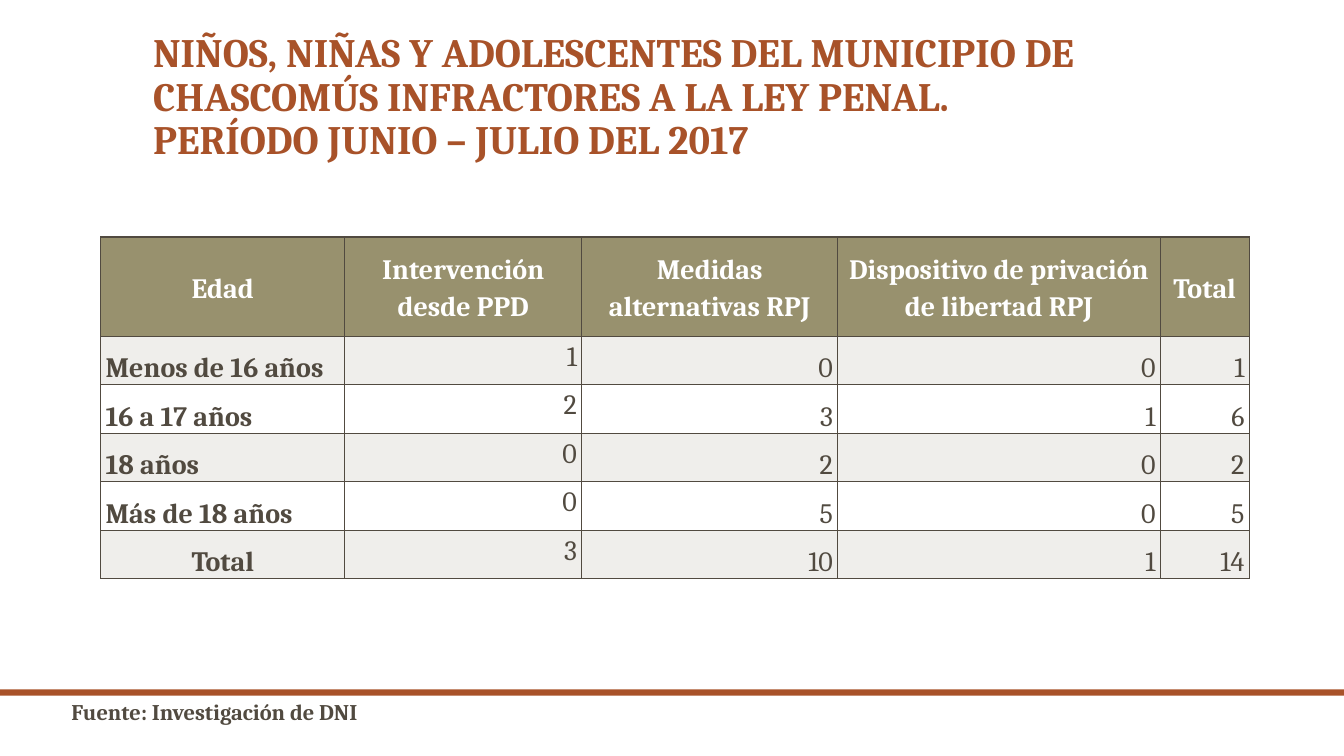
from dataclasses import dataclass
from typing import Any

from lxml.etree import SubElement
from pptx import Presentation
from pptx.dml.color import RGBColor
from pptx.enum.shapes import MSO_SHAPE
from pptx.enum.text import MSO_ANCHOR, PP_ALIGN
from pptx.oxml.ns import qn
from pptx.slide import Slide
from pptx.table import _Cell
from pptx.util import Cm, Pt

RUST = RGBColor(0xA8, 0x52, 0x29)
BROWN = RGBColor(0x51, 0x4A, 0x40)
OLIVE = RGBColor(0x98, 0x91, 0x6E)
PALE = RGBColor(0xEF, 0xEE, 0xEB)
WHITE = RGBColor(0xFF, 0xFF, 0xFF)
FONT = "Cambria"


@dataclass(frozen=True)
class TextStyle:
    size: float
    color: RGBColor
    bold: bool = True
    align: PP_ALIGN = PP_ALIGN.LEFT
    anchor: MSO_ANCHOR = MSO_ANCHOR.BOTTOM
    line_spacing: float = 1.15


@dataclass(frozen=True)
class TextBlock:
    text: str
    left: float
    top: float
    width: float
    height: float
    style: TextStyle


HEADER = TextStyle(20, WHITE, align=PP_ALIGN.CENTER, anchor=MSO_ANCHOR.MIDDLE)
AGE = TextStyle(20, BROWN)
TOTAL_LABEL = TextStyle(20, BROWN, align=PP_ALIGN.CENTER)
COUNT = TextStyle(20, BROWN, bold=False, align=PP_ALIGN.RIGHT)
PPD_COUNT = TextStyle(20, BROWN, bold=False, align=PP_ALIGN.RIGHT, anchor=MSO_ANCHOR.TOP)

TEXT_BLOCKS = (
    TextBlock(
        "NIÑOS, NIÑAS Y ADOLESCENTES DEL MUNICIPIO DE CHASCOMÚS INFRACTORES A LA LEY PENAL. "
        "\vPERÍODO JUNIO – JULIO DEL 2017",
        3.61, 1.07, 26.67, 3.18, TextStyle(28.8, RUST, line_spacing=0.9),
    ),
    TextBlock(
        "Fuente: Investigación de DNI",
        1.55, 17.42, 30.81, 0.94,
        TextStyle(16, BROWN, anchor=MSO_ANCHOR.TOP, line_spacing=1.07),
    ),
)
COLUMN_WIDTHS = (6.15, 5.97, 6.45, 8.13, 2.24)
HEADER_HEIGHT = 2.51
ROW_HEIGHT = 1.22
ROWS = (
    ("Edad", "Intervención desde PPD", "Medidas alternativas RPJ",
     "Dispositivo de privación de libertad RPJ", "Total"),
    ("Menos de 16 años", "1", "0", "0", "1"),
    ("16 a 17 años", "2", "3", "1", "6"),
    ("18 años", "0", "2", "0", "2"),
    ("Más de 18 años", "0", "5", "0", "5"),
    ("Total", "3", "10", "1", "14"),
)


def set_attributes(target: Any, values: dict[str, Any]) -> None:
    for name, value in values.items():
        setattr(target, name, value)


def write_text(text_frame: Any, text: str, style: TextStyle) -> None:
    text_frame.text = text
    paragraph = text_frame.paragraphs[0]
    set_attributes(paragraph, {"alignment": style.align, "line_spacing": style.line_spacing})
    for run in paragraph.runs:
        set_attributes(run.font, {"name": FONT, "size": Pt(style.size), "bold": style.bold})
        run.font.color.rgb = style.color


def add_text_block(slide: Slide, block: TextBlock) -> None:
    shape = slide.shapes.add_textbox(
        Cm(block.left), Cm(block.top), Cm(block.width), Cm(block.height)
    )
    set_attributes(shape.text_frame, {"word_wrap": True, "vertical_anchor": block.style.anchor})
    write_text(shape.text_frame, block.text, block.style)


def add_footer_bar(slide: Slide) -> None:
    bar = slide.shapes.add_shape(MSO_SHAPE.RECTANGLE, 0, Cm(17.37), Cm(33.87), Cm(0.16))
    bar.shadow.inherit = False
    bar.fill.solid()
    bar.fill.fore_color.rgb = RUST
    bar.line.fill.background()


def add_borders(cell: _Cell) -> None:
    properties = cell._tc.get_or_add_tcPr()
    for side in ("a:lnL", "a:lnR", "a:lnT", "a:lnB"):
        line = SubElement(properties, qn(side), w=str(Pt(1)))
        fill = SubElement(line, qn("a:solidFill"))
        SubElement(fill, qn("a:srgbClr"), val=str(BROWN))


def cell_style(row: int, column: int) -> TextStyle:
    if row == 0:
        return HEADER
    if column == 0:
        return TOTAL_LABEL if row == len(ROWS) - 1 else AGE
    return PPD_COUNT if column == 1 else COUNT


def row_fill(row: int) -> RGBColor:
    if row == 0:
        return OLIVE
    return PALE if row % 2 else WHITE


def add_age_table(slide: Slide) -> None:
    height = HEADER_HEIGHT + ROW_HEIGHT * (len(ROWS) - 1)
    table = slide.shapes.add_table(
        len(ROWS), len(COLUMN_WIDTHS), Cm(2.54), Cm(5.97), Cm(sum(COLUMN_WIDTHS)), Cm(height)
    ).table
    table.horz_banding = False
    for column, width in zip(table.columns, COLUMN_WIDTHS):
        column.width = Cm(width)
    for row_index, texts in enumerate(ROWS):
        table.rows[row_index].height = Cm(ROW_HEIGHT if row_index else HEADER_HEIGHT)
        for column_index, text in enumerate(texts):
            cell = table.cell(row_index, column_index)
            style = cell_style(row_index, column_index)
            set_attributes(cell, {
                "margin_left": Cm(0.12), "margin_right": Cm(0.12),
                "margin_top": 0, "margin_bottom": 0, "vertical_anchor": style.anchor,
            })
            add_borders(cell)
            cell.fill.solid()
            cell.fill.fore_color.rgb = row_fill(row_index)
            write_text(cell.text_frame, text, style)


def main() -> None:
    presentation = Presentation()
    set_attributes(presentation, {"slide_width": Cm(33.87), "slide_height": Cm(19.05)})
    slide = presentation.slides.add_slide(presentation.slide_layouts[6])
    add_footer_bar(slide)
    add_age_table(slide)
    for block in TEXT_BLOCKS:
        add_text_block(slide, block)
    presentation.save("out.pptx")


if __name__ == "__main__":
    main()
